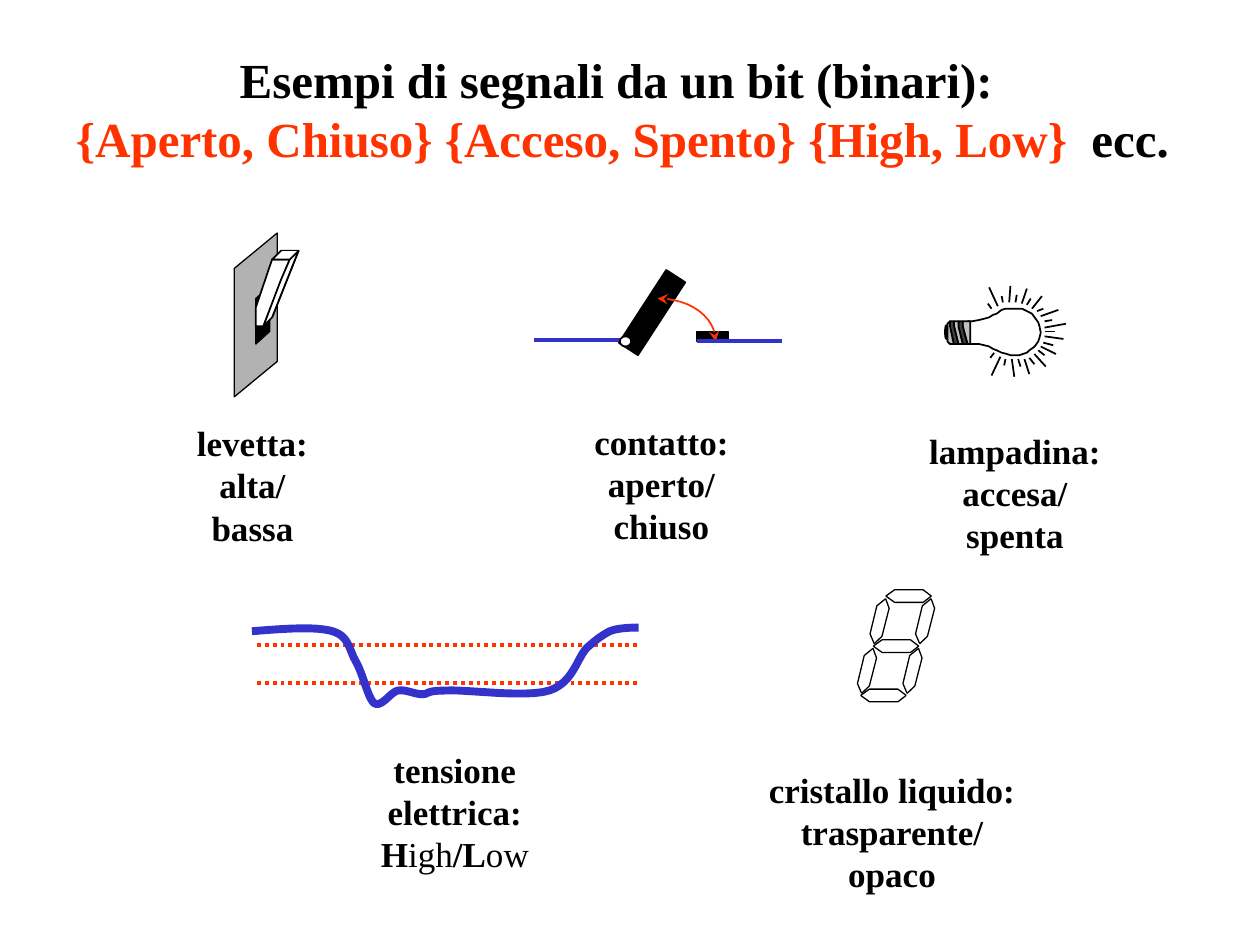
from dataclasses import dataclass
from typing import Optional

from lxml.etree import SubElement
from pptx import Presentation
from pptx.dml.color import RGBColor
from pptx.enum.dml import MSO_LINE
from pptx.enum.shapes import MSO_CONNECTOR, MSO_SHAPE
from pptx.enum.text import MSO_ANCHOR, MSO_AUTO_SIZE, PP_ALIGN
from pptx.oxml.ns import qn
from pptx.util import Pt

COLORS = {
    "black": "000000", "white": "FFFFFF", "red": "FF3300", "blue": "3333CC",
    "plate": "B2B2B2", "light thread": "C0C0C0", "dark thread": "3F3F3F",
}
FONT = "Times New Roman"
Point = tuple[float, float]


@dataclass
class Label:
    left: float
    top: float
    width: float
    lines: list[list[tuple[str, bool]]]  # runs of (text, bold)
    wraps: bool


@dataclass
class Outline:
    points: list[Point]
    fill: Optional[str] = None
    weight: float = 1
    closed: bool = True
    line: str = "black"


LABELS = [
    Label(313.2, 236.9, 129.6, [[("contatto:", True)], [("aperto/chiuso", True)]], True),
    Label(514.8, 241.9, 130.3, [[("lampadina:", True)], [("accesa/spenta", True)]], False),
    Label(95, 237.6, 98.6, [[("levetta:", True)], [("alta/bassa", True)]], True),
    Label(177.1, 424.1, 165.6, [
        [("tensione elettrica:", True)],
        [("H", True), ("igh", False), ("/L", True), ("ow", False)]], True),
    Label(425.5, 435.6, 168.5,
          [[("cristallo liquido:", True)], [("trasparente/opaco", True)]], False),
]

BULB_GLASS = Outline([
    (567.4, 180), (569.5, 179.3), (572.4, 177.1), (574.6, 176.4), (578.2, 176.4),
    (583.9, 176.4), (586.8, 177.8), (589.7, 179.3), (591.8, 182.2), (593.3, 184.3),
    (594, 186.5), (594.7, 190.1), (594, 193), (593.3, 195.1), (591.8, 197.3),
    (590.4, 198.7), (588.2, 200.2), (586.8, 201.6), (584.6, 202.3), (582.5, 203),
    (577.4, 203), (575.3, 202.3), (572.4, 201.6), (569.5, 200.2), (567.4, 199.4),
    (565.2, 198), (562.3, 197.3), (559.4, 196.6), (553, 196.6), (553, 183.6),
    (555.8, 183.6), (559.4, 182.9), (562.3, 182.2), (565.2, 181.4)], "white")
BULB_RAYS = [
    (603.4, 202.3, 594.7, 198), (601.9, 197.3, 596.2, 195.8), (607.7, 193.7, 596.9, 192.2),
    (602.6, 189.4, 596.9, 189.4), (609.1, 185, 596.9, 187.2), (596.9, 183.6, 601.2, 182.9),
    (594.7, 180.7, 604.8, 177.1), (592.6, 177.8, 596.2, 176.4), (589.7, 176.4, 595.4, 169.2),
    (586.8, 174.2, 589, 170.6), (583.9, 173.5, 586.8, 164.9), (580.3, 172.8, 581, 168.5),
    (576.7, 172.8, 577.4, 163.4), (573.1, 172.8, 572.4, 169.2), (570.2, 175, 565.2, 164.2),
    (566.6, 176.4, 564.5, 173.5), (591.1, 202.3, 597.6, 209.5), (588.2, 204.5, 591.1, 208.1),
    (585.4, 205.2, 588.2, 213.8), (581.8, 205.2, 583.2, 209.5), (578.2, 205.2, 579.6, 215.3),
    (574.6, 205.2, 573.8, 208.8), (571.7, 203.8, 566.6, 214.6), (568.1, 201.6, 565.9, 204.5),
    (596.9, 203, 593.3, 200.2),
]
LEVER = [
    Outline([(133.9, 153.4), (158.4, 133.2), (158.4, 206.6), (133.9, 226.8)], "plate", 0.75),
    Outline([(146.2, 170.6), (154.1, 163.4), (154.1, 189.4), (146.2, 196.6)], "black", 0.75),
    Outline([(160.6, 143.3), (150.5, 170.6), (150.5, 181.4), (155.5, 181.4), (170.6, 143.3)]),
    Outline([(155.5, 148.3), (146.2, 175.7), (146.2, 186.5), (150.5, 186.5), (165.6, 148.3)],
            "white"),
    Outline([(155.5, 181.4), (170.6, 143.3), (165.6, 148.3), (160.6, 159.8), (150.5, 186.5)],
            "white"),
    Outline([(160.6, 143.3), (155.5, 148.3), (165.6, 148.3), (170.6, 143.3)], "white",
            closed=False),
]
SWING = [(375.8, 170.6), (394.6, 170.6), (409, 181.4), (409, 195.1)]
VOLTAGE = [
    (144, 360.7), (162, 359.3), (180, 357.8), (190.1, 360.7), (199.4, 363.6), (199.4, 370.8),
    (203, 377.3), (207.4, 384.5), (210.2, 398.9), (213.8, 401.8), (218.2, 404.6),
    (223.2, 395.3), (227.5, 394.6), (231.8, 393.8), (236.9, 396.7), (241.2, 396.7),
    (245.5, 396.7), (242.6, 394.6), (254.9, 394.6), (266.4, 393.8), (300.2, 398.9),
    (313.9, 394.6), (327.6, 390.2), (329.8, 375.8), (335.5, 370.1), (341.3, 365),
    (344.2, 362.9), (348.5, 360.7), (353.5, 358.6), (362.9, 358.6), (365, 358.6),
]
# Each display segment is two open halves, relative to its first corner.
FLAT_HALVES = [[(0, 0), (5, s * 3.6), (21.3, s * 3.6), (26, 0)] for s in (-1, 1)]
UPRIGHT_HALVES = [[(0, 0), (-2.4, -5.6), (1.5, -21.6), (6.5, -25.7)],
                  [(0, 0), (4.4, -4.2), (8.5, -20.2), (6.5, -25.7)]]
FLAT_CORNERS = [(506.2, 340.6), (499, 369.2), (491.8, 397.4)]
UPRIGHT_CORNERS = [(525.6, 367.8), (518.4, 396.2), (499.6, 367.8), (492.4, 396.2)]


def rgb(name: str) -> RGBColor:
    return RGBColor.from_string(COLORS[name])


def paint(shape, fill: Optional[str], line: str, weight: float) -> None:
    shape.shadow.inherit = False
    if fill:
        shape.fill.solid()
        shape.fill.fore_color.rgb = rgb(fill)
    else:
        shape.fill.background()
    shape.line.color.rgb = rgb(line)
    shape.line.width = Pt(weight)


def draw_outline(slide, outline: Outline):
    first, *others = [(Pt(x), Pt(y)) for x, y in outline.points]
    builder = slide.shapes.build_freeform(*first)
    builder.add_line_segments(others, close=outline.closed)
    shape = builder.convert_to_shape()
    paint(shape, outline.fill, outline.line, outline.weight)
    return shape


def draw_line(slide, ends: tuple, color: str = "black", weight: float = 1, dash=None) -> None:
    line = slide.shapes.add_connector(MSO_CONNECTOR.STRAIGHT, *[Pt(v) for v in ends])
    line.line.color.rgb = rgb(color)
    line.line.width = Pt(weight)
    if dash:
        line.line.dash_style = dash
    SubElement(line._element.spPr, qn("a:effectLst"))


def draw_preset(slide, preset, box: tuple, fill: str, rotation: float = 0) -> None:
    shape = slide.shapes.add_shape(preset, *[Pt(v) for v in box])
    shape.rotation = rotation
    paint(shape, fill, "black", 1)


def trace_bezier(nodes: list[Point], steps: int = 12) -> list[Point]:
    """Return points along cubic curves that share their end nodes."""
    traced = [nodes[0]]
    for start in range(0, len(nodes) - 1, 3):
        controls = nodes[start:start + 4]
        for step in range(1, steps + 1):
            t = step / steps
            weights = ((1 - t) ** 3, 3 * t * (1 - t) ** 2, 3 * t * t * (1 - t), t ** 3)
            traced.append(tuple(sum(w * c[axis] for w, c in zip(weights, controls))
                                for axis in (0, 1)))
    return traced


def draw_label(slide, label: Label) -> None:
    frame = slide.shapes.add_textbox(
        Pt(label.left), Pt(label.top), Pt(label.width), Pt(55.4)).text_frame
    frame.word_wrap = label.wraps
    frame.margin_left = frame.margin_right = Pt(9)
    for index, runs in enumerate(label.lines):
        paragraph = frame.add_paragraph() if index else frame.paragraphs[0]
        paragraph.alignment = PP_ALIGN.CENTER
        paragraph.font.name, paragraph.font.size = FONT, Pt(20)
        paragraph.font.color.rgb = rgb("black")
        for text, bold in runs:
            run = paragraph.add_run()
            run.text, run.font.bold = text, bold


def write_title(slide) -> None:
    title = slide.shapes.title
    title.left, title.top, title.width, title.height = Pt(22.3), Pt(12.2), Pt(666.7), Pt(99.4)
    frame = title.text_frame
    frame.auto_size = MSO_AUTO_SIZE.NONE
    frame.vertical_anchor = MSO_ANCHOR.MIDDLE
    paragraph = frame.paragraphs[0]
    paragraph.alignment = PP_ALIGN.CENTER
    paragraph.font.name, paragraph.font.size, paragraph.font.bold = FONT, Pt(28), True
    paragraph.text = "Esempi di segnali da un bit (binari): \v "
    for text, color in (("{Aperto, Chiuso} {Acceso, Spento} {High, Low}  ", "red"),
                        ("ecc. ", "black")):
        run = paragraph.add_run()
        run.text, run.font.color.rgb = text, rgb(color)


def draw_contact(slide) -> None:
    draw_preset(slide, MSO_SHAPE.RECTANGLE, (347.8, 172.1, 49.7, 13), "black", 303)
    draw_preset(slide, MSO_SHAPE.RECTANGLE, (398.2, 189.4, 18, 5.8), "black")
    swing = draw_outline(slide, Outline(trace_bezier(SWING), closed=False, line="red"))
    for end in ("a:headEnd", "a:tailEnd"):
        SubElement(swing.line._get_or_add_ln(), qn(end), type="stealth")
    draw_line(slide, (354.2, 194.4, 305.3, 194.4), "blue", 2.25)
    draw_line(slide, (447.1, 195.1, 398.2, 195.1), "blue", 2.25)
    draw_preset(slide, MSO_SHAPE.OVAL, (354.2, 192.2, 6.5, 5.8), "white")


def draw_bulb(slide) -> None:
    draw_outline(slide, BULB_GLASS)
    draw_preset(slide, MSO_SHAPE.OVAL, (540, 185.8, 1.4, 7.9), "black")
    top, bottom, shoulder, pitch = 183.6, 196.6, 186.5, 2.5
    draw_outline(slide, Outline([(554.4, top), (550.1, top), (550.1, shoulder),
                                 (553, bottom), (554.4, bottom)], "light thread"))
    for x, shade in ((547.7, "dark"), (545.2, "light"), (542.7, "dark")):
        draw_outline(slide, Outline([
            (x + pitch, shoulder), (x + pitch, top), (x, top), (x, shoulder),
            (x + pitch, bottom), (x + 2 * pitch, bottom)], f"{shade} thread"))
    draw_outline(slide, Outline([(542.9, shoulder), (542.9, top), (541.4, 185), (541.4, 195.1),
                                 (542.9, bottom), (545, bottom)], "light thread"))
    for ray in BULB_RAYS:
        draw_line(slide, ray)


def draw_digit(slide) -> None:
    for corners, halves in ((FLAT_CORNERS, FLAT_HALVES), (UPRIGHT_CORNERS, UPRIGHT_HALVES)):
        for x, y in corners:
            for half in halves:
                points = [(x + dx, y + dy) for dx, dy in half]
                draw_outline(slide, Outline(points, weight=0.75, closed=False))


def main() -> None:
    deck = Presentation()
    deck.slide_width, deck.slide_height = Pt(720), Pt(540)
    slide = deck.slides.add_slide(deck.slide_layouts[5])
    write_title(slide)
    draw_contact(slide)
    draw_bulb(slide)
    for part in LEVER:
        draw_outline(slide, part)
    draw_line(slide, (160.6, 143.3, 170.6, 143.3), weight=0.75)
    for threshold in (368.6, 390.2):
        draw_line(slide, (146.9, threshold, 365, threshold), "red", 2.25, MSO_LINE.ROUND_DOT)
    draw_outline(slide, Outline(trace_bezier(VOLTAGE), None, 4.5, False, "blue"))
    draw_digit(slide)
    for label in LABELS:
        draw_label(slide, label)
    deck.save("out.pptx")


if __name__ == "__main__":
    main()
